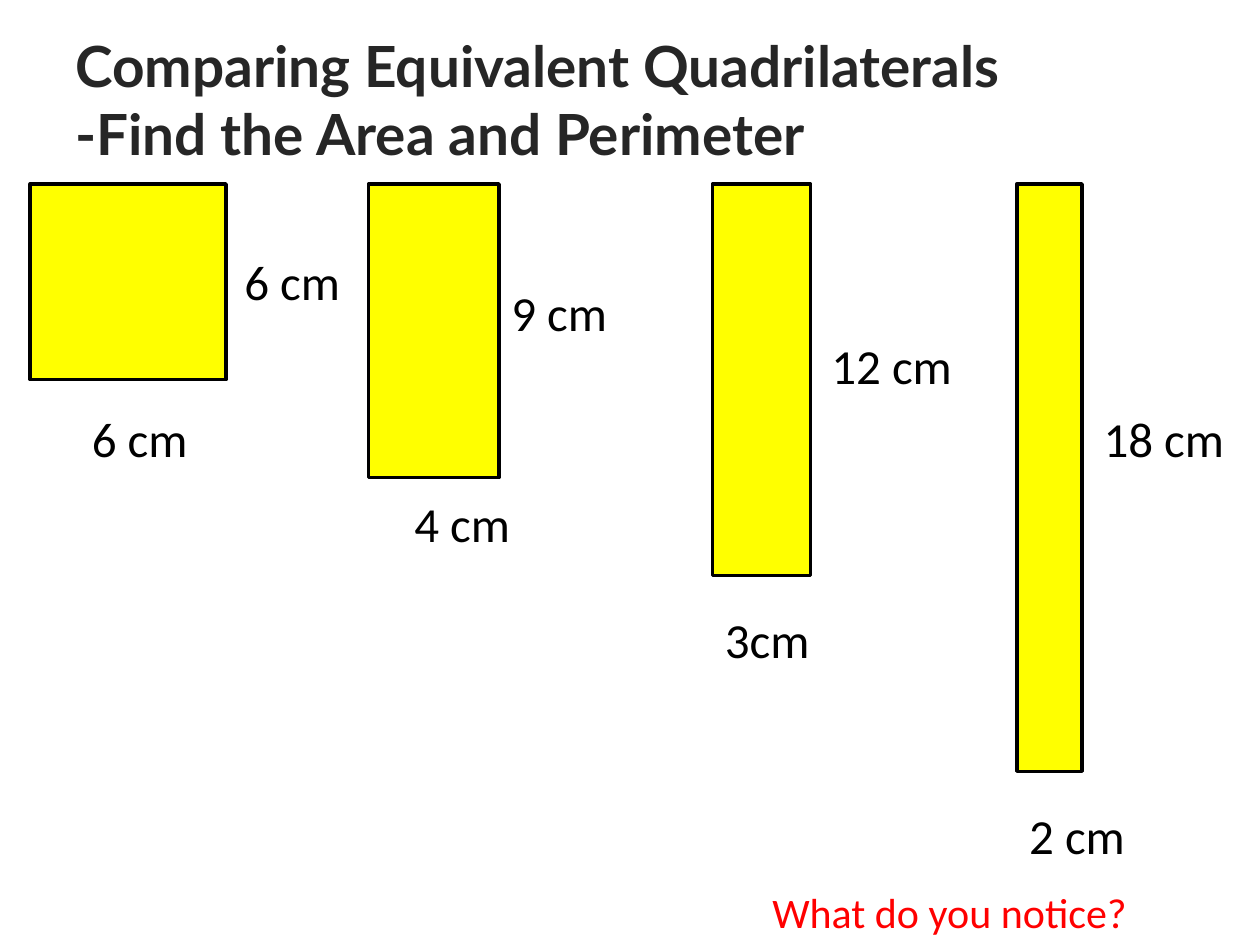
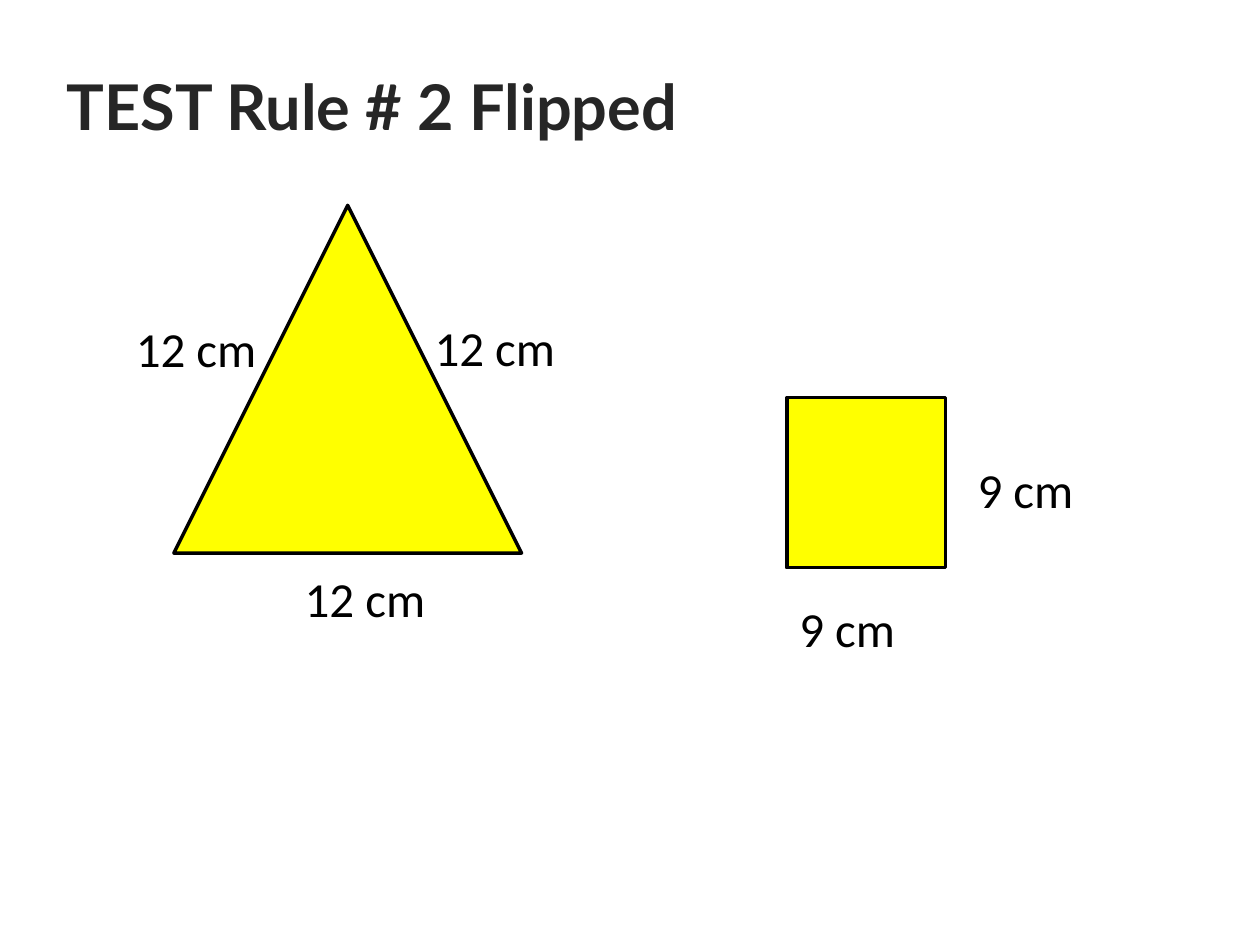
import pptx
import pptx.util
import pptx.dml.color
import pptx.enum.shapes
import pptx.enum.text

RGBColor = pptx.dml.color.RGBColor
SHAPE = pptx.enum.shapes.MSO_SHAPE
ALIGN = pptx.enum.text.PP_ALIGN
ANCHOR = pptx.enum.text.MSO_ANCHOR

YELLOW = RGBColor(0xFF, 0xFF, 0x00)
BLACK = RGBColor(0x00, 0x00, 0x00)
CHARCOAL = RGBColor(0x26, 0x26, 0x26)
RED = RGBColor(0xFF, 0x00, 0x00)

WIDTH, HEIGHT = pptx.util.Inches(10), pptx.util.Inches(7.5)
COLS, ROWS = 100, 75
TITLE_SIZE = (90, 12.5)
LABEL_SIZE = (12.5, 5.9)
FIGURE_TOP = 14.6
COLS_PER_CM = 2.59


def place(box):
    """Turn a box in grid columns and rows into slide lengths."""
    x, y, w, h = box
    col, row = WIDTH / COLS, HEIGHT / ROWS
    return round(x * col), round(y * row), round(w * col), round(h * row)


def add_text(slide, box, text, size=28, font="Calibri", color=BLACK, bold=False,
             align=ALIGN.LEFT, anchor=ANCHOR.TOP, spacing=1.0, after=0):
    """Add a wrapped text box with one format throughout."""
    tf = slide.shapes.add_textbox(*place(box)).text_frame
    tf.word_wrap = True
    tf.vertical_anchor = anchor
    p = tf.paragraphs[0]
    p.text = text
    p.alignment = align
    p.line_spacing = spacing
    p.space_after = pptx.util.Pt(after)
    for r in p.runs:
        r.font.size = pptx.util.Pt(size)
        r.font.name = font
        r.font.bold = bold
        r.font.color.rgb = color


def add_title(slide, x, y, text, size):
    """Add the slide title."""
    add_text(slide, (x, y, *TITLE_SIZE), text, size=size, font="Lato",
             color=CHARCOAL, bold=True, anchor=ANCHOR.MIDDLE)


def add_figure(slide, kind, box, labels):
    """Draw a figure and its side lengths, offset from the figure's corner."""
    sp = slide.shapes.add_shape(kind, *place(box))
    sp.shadow.inherit = False
    sp.fill.solid()
    sp.fill.fore_color.rgb = YELLOW
    sp.line.color.rgb = BLACK
    sp.line.width = pptx.util.Pt(2)
    for text, dx, dy in labels:
        add_text(slide, (box[0] + dx, box[1] + dy, *LABEL_SIZE), text,
                 spacing=1.15, after=10)


def build_comparison(slide):
    """Compare four rectangles of equal area, drawn to scale."""
    add_title(slide, 5, 1.6,
              "Comparing Equivalent Quadrilaterals\n-Find the Area and Perimeter", 32.4)
    rectangles = [
        (2.4, 6, 6, [("6 cm", 3.9, 16.6), ("6 cm", 16, 4.2)]),
        (29.25, 4, 9, [("4 cm", 2.65, 23.4), ("9 cm", 10.35, 6.6)]),
        (56.55, 3, 12, [("3cm", 0, 32.6), ("12 cm", 8.45, 10.8)]),
        (80.7, 2, 18, [("2 cm", 0, 48.1), ("18 cm", 5.9, 16.6)]),
    ]
    for x, width_cm, height_cm, labels in rectangles:
        box = (x, FIGURE_TOP, width_cm * COLS_PER_CM, height_cm * COLS_PER_CM)
        add_figure(slide, SHAPE.RECTANGLE, box, labels)
    add_text(slide, (51.9, 69.9, 46.9, 5), "What do you notice?", size=24,
             color=RED, align=ALIGN.CENTER)


def build_rule_test(slide):
    """Set a triangle beside a square of equal perimeter."""
    add_title(slide, 4.3, 2.1, "TEST Rule # 2 Flipped", 36)
    add_figure(slide, SHAPE.RECTANGLE, (62.45, 31.55, 12.6, 13.5),
               [("9 cm", 0, 14.75), ("9 cm", 14.15, 3.75)])
    add_figure(slide, SHAPE.ISOSCELES_TRIANGLE, (13.8, 16.3, 27.6, 27.6),
               [("12 cm", 9.4, 27.6), ("12 cm", 19.7, 7.7), ("12 cm", -4, 7.8)])


def main():
    """Build both slides and save the presentation."""
    prs = pptx.Presentation()
    prs.slide_width, prs.slide_height = WIDTH, HEIGHT
    for build in (build_comparison, build_rule_test):
        build(prs.slides.add_slide(prs.slide_layouts[6]))
    prs.save("out.pptx")


if __name__ == "__main__":
    main()
